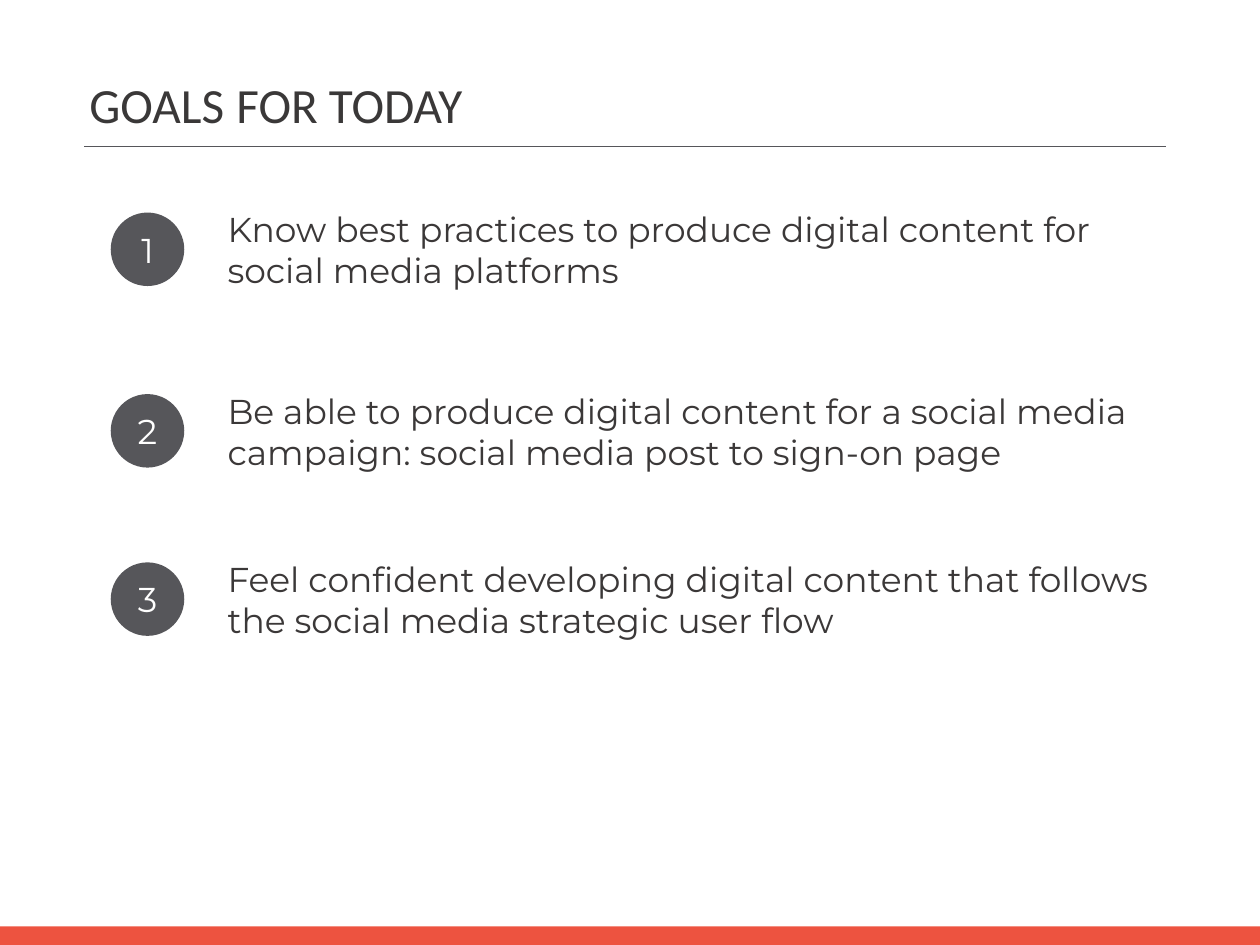
"""Build the slide that lists the three goals for today."""
import pptx
import pptx.dml.color
import pptx.enum.shapes
import pptx.enum.text
import pptx.oxml.ns
import pptx.util
from lxml import etree

Inches = pptx.util.Inches
Align = pptx.enum.text.PP_ALIGN
Anchor = pptx.enum.text.MSO_ANCHOR
Shape = pptx.enum.shapes.MSO_SHAPE

GOALS = [
    (2.4, 10.74, "Know best practices to produce digital content for social media platforms"),
    (4.45, 11.06, "Be able to produce digital content for a social media campaign: "
                  "social media post to sign-on page"),
    (6.35, 10.74, "Feel confident developing digital content that follows "
                  "the social media strategic user flow"),
]


def rgb(value):
    return pptx.dml.color.RGBColor.from_string(value)


def write(paragraph, text, size=28, font="Montserrat", color="3B3838", bold=False,
          align=Align.LEFT):
    paragraph.alignment = align
    run = paragraph.add_run()
    run.text = text
    run.font.size = pptx.util.Pt(size)
    run.font.name = font
    run.font.bold = bold
    run.font.color.rgb = rgb(color)


class GoalsSlide:
    gray = "56565A"
    orange = "ED5340"
    title_style = {"font": "Calibri", "color": "3A3838"}

    def __init__(self, deck):
        self.slide = deck.slides.add_slide(deck.slide_layouts[5])
        self.shapes = self.slide.shapes

    def title(self, left, top, width, height, parts):
        heading = self.shapes.title
        heading.left, heading.top = Inches(left), Inches(top)
        heading.width, heading.height = Inches(width), Inches(height)
        frame = heading.text_frame
        frame.auto_size = pptx.enum.text.MSO_AUTO_SIZE.NONE
        frame.vertical_anchor = Anchor.TOP
        for text, size, bold in parts:
            write(frame.paragraphs[0], text, size=size, bold=bold, **self.title_style)

    def block(self, kind, left, top, width, height, color):
        block = self.shapes.add_shape(
            kind, Inches(left), Inches(top), Inches(width), Inches(height))
        block.shadow.inherit = False
        block.fill.solid()
        block.fill.fore_color.rgb = rgb(color)
        block.line.fill.background()
        return block

    def badge(self, left, top, size, number):
        frame = self.block(Shape.OVAL, left, top, size, size, self.gray).text_frame
        frame.vertical_anchor = Anchor.MIDDLE
        write(frame.paragraphs[0], str(number), color="FFFFFF", align=Align.CENTER)

    def text(self, left, top, width, height, text):
        frame = self.shapes.add_textbox(
            Inches(left), Inches(top), Inches(width), Inches(height)).text_frame
        frame.word_wrap = True
        write(frame.paragraphs[0], text)

    def rule(self, left, right, y):
        rule = self.shapes.add_connector(
            pptx.enum.shapes.MSO_CONNECTOR.STRAIGHT,
            Inches(left), Inches(y), Inches(right), Inches(y))
        rule.line.color.rgb = rgb(self.gray)
        rule.line.width = pptx.util.Pt(1)
        etree.SubElement(rule._element.spPr, pptx.oxml.ns.qn("a:effectLst"))


def main():
    deck = pptx.Presentation()
    deck.slide_width, deck.slide_height = Inches(14.22), Inches(10.67)
    page = GoalsSlide(deck)
    page.block(Shape.RECTANGLE, 0, 10.46, 14.22, 0.21, page.orange)
    page.title(0.91, 0.73, 4.57, 0.84,
               [("GOALS", 40, False), (" ", 44, True), ("FOR TODAY", 40, False)])
    page.rule(0.95, 13.16, 1.65)
    for number, (top, width, goal) in enumerate(GOALS, start=1):
        page.badge(1.25, top, 0.83, number)
        page.text(2.47, top - 0.1, width, 1.04, goal)
    deck.save("out.pptx")


if __name__ == "__main__":
    main()
